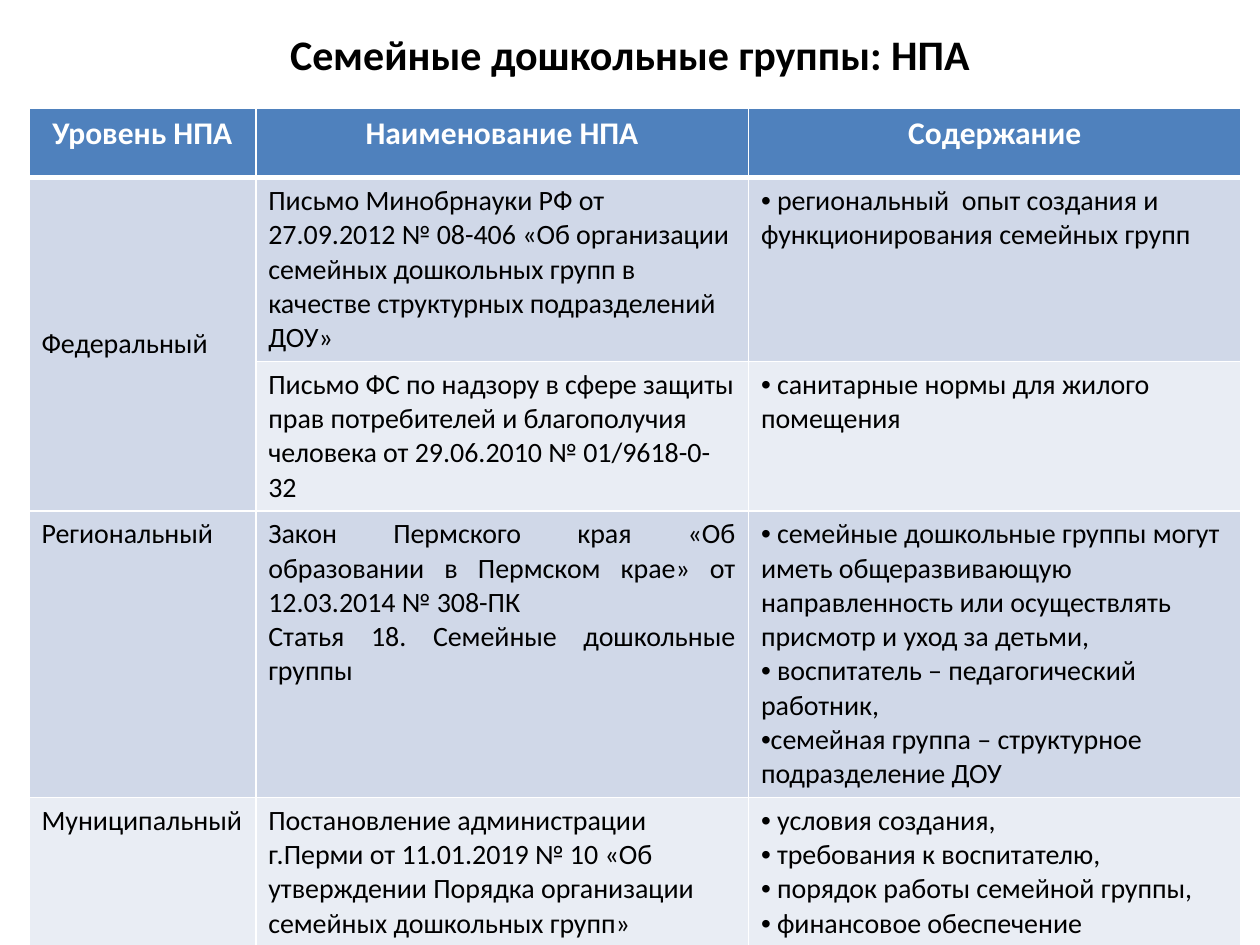
from pptx import Presentation
from pptx.dml.color import RGBColor
from pptx.enum import text as t
from pptx.oxml import parse_xml
from pptx.oxml.ns import nsdecls
from pptx.util import Inches, Pt

FONT = "Calibri"
COLORS = {"head": "4F81BD", "dark": "D0D8E8", "light": "E9EDF4",
          "white": "FFFFFF", "black": "000000"}
COLS = [1.8, 3.91, 3.91]
ROWS = [0.55, 1.35, 1.04, 1.93, 1.02]
FILLS = ["head", "dark", "light", "dark", "light"]
HEADS = ["Уровень НПА", "Наименование НПА", "Содержание"]
LEVELS = ["Федеральный", None, "Региональный", "Муниципальный"]
ACTS = [
    ["Письмо Минобрнауки РФ от 27.09.2012 № 08-406 «Об организации семейных "
     "дошкольных групп в качестве структурных подразделений ДОУ»"],
    ["Письмо ФС по надзору в сфере защиты прав потребителей и благополучия "
     "человека от 29.06.2010 № 01/9618-0-32"],
    ["Закон Пермского края «Об образовании в Пермском крае» от 12.03.2014 "
     "№ 308-ПК",
     "Статья 18. Семейные дошкольные группы"],
    ["Постановление администрации г.Перми от 11.01.2019 № 10 «Об утверждении "
     "Порядка организации семейных дошкольных групп»"],
]
POINTS = [
    [" региональный  опыт создания и функционирования семейных групп"],
    [" санитарные нормы для жилого помещения"],
    [" семейные дошкольные группы могут иметь общеразвивающую направленность "
     "или осуществлять присмотр и уход за детьми,",
     " воспитатель – педагогический работник,",
     "семейная группа – структурное подразделение ДОУ"],
    [" условия создания,", " требования к воспитателю,",
     " порядок работы семейной группы,", " финансовое обеспечение"],
]


def add_run(par, words, size, color="black", bold=False):
    """Add one formatted run to a paragraph."""
    run = par.add_run()
    run.text = words
    font = run.font
    font.name, font.size, font.bold = FONT, Pt(size), bold
    font.color.rgb = RGBColor.from_string(COLORS[color])


def add_bullet(par):
    """Give a paragraph a round bullet without a hanging indent."""
    props = par._p.get_or_add_pPr()
    props.set("marL", "0")
    props.set("indent", "0")
    props.append(parse_xml(f'<a:buFont {nsdecls("a")} typeface="Arial"/>'))
    props.append(parse_xml(f'<a:buChar {nsdecls("a")} char="•"/>'))


def fill_cell(cell, lines, size=16, color="black", bold=False, align=None,
              bullet=False):
    """Write the paragraphs of one cell."""
    frame = cell.text_frame
    for num, line in enumerate(lines):
        par = frame.add_paragraph() if num else frame.paragraphs[0]
        par.alignment = align
        if bullet:
            add_bullet(par)
        add_run(par, line, size, color, bold)


def style_cell(cell, fill, top=1, base=1):
    """Set the borders and the fill of one cell."""
    props = cell._tc.get_or_add_tcPr()
    for side, width in zip("LRTB", (1, 1, top, base)):
        props.append(parse_xml(
            f'<a:ln{side} {nsdecls("a")} w="{Pt(width)}"><a:solidFill>'
            f'<a:srgbClr val="{COLORS["white"]}"/></a:solidFill></a:ln{side}>'))
    cell.fill.solid()
    cell.fill.fore_color.rgb = RGBColor.from_string(COLORS[fill])


def add_title(slide, words):
    """Place and fill the slide title."""
    title = slide.shapes.title
    title.left, title.top = Inches(0.5), Inches(0)
    title.width, title.height = Inches(9), Inches(0.86)
    frame = title.text_frame
    frame.vertical_anchor = t.MSO_ANCHOR.MIDDLE
    par = frame.paragraphs[0]
    par.alignment = t.PP_ALIGN.CENTER
    add_run(par, words, 24, bold=True)


def add_grid(slide):
    """Build the table with its sizes, fills and borders."""
    grid = slide.shapes.add_table(
        len(ROWS), len(COLS), Inches(0.23), Inches(0.86),
        Inches(sum(COLS)), Inches(sum(ROWS))).table
    for col, width in zip(grid.columns, COLS):
        col.width = Inches(width)
    for num, (row, height) in enumerate(zip(grid.rows, ROWS)):
        row.height = Inches(height)
        for col, cell in enumerate(row.cells):
            fill = "dark" if (num, col) == (2, 0) else FILLS[num]
            style_cell(cell, fill, 3 if num == 1 else 1, 3 if num == 0 else 1)
    grid.cell(1, 0).merge(grid.cell(2, 0))
    return grid


def fill_grid(grid):
    """Write the header and the rows of legal acts."""
    for col, head in enumerate(HEADS):
        fill_cell(grid.cell(0, col), [head], 18, "white", True,
                  t.PP_ALIGN.CENTER)
    for num, (level, act, points) in enumerate(zip(LEVELS, ACTS, POINTS), 1):
        if level:
            fill_cell(grid.cell(num, 0), [level])
        align = t.PP_ALIGN.JUSTIFY if len(act) > 1 else None
        fill_cell(grid.cell(num, 1), act, align=align)
        fill_cell(grid.cell(num, 2), points, bullet=True)
    grid.cell(1, 0).vertical_anchor = t.MSO_ANCHOR.MIDDLE


def main():
    """Build and save the slide."""
    deck = Presentation()
    deck.slide_width, deck.slide_height = Inches(10), Inches(7.5)
    slide = deck.slides.add_slide(deck.slide_layouts[5])
    add_title(slide, "Семейные дошкольные группы: НПА")
    fill_grid(add_grid(slide))
    deck.save("out.pptx")


if __name__ == "__main__":
    main()
